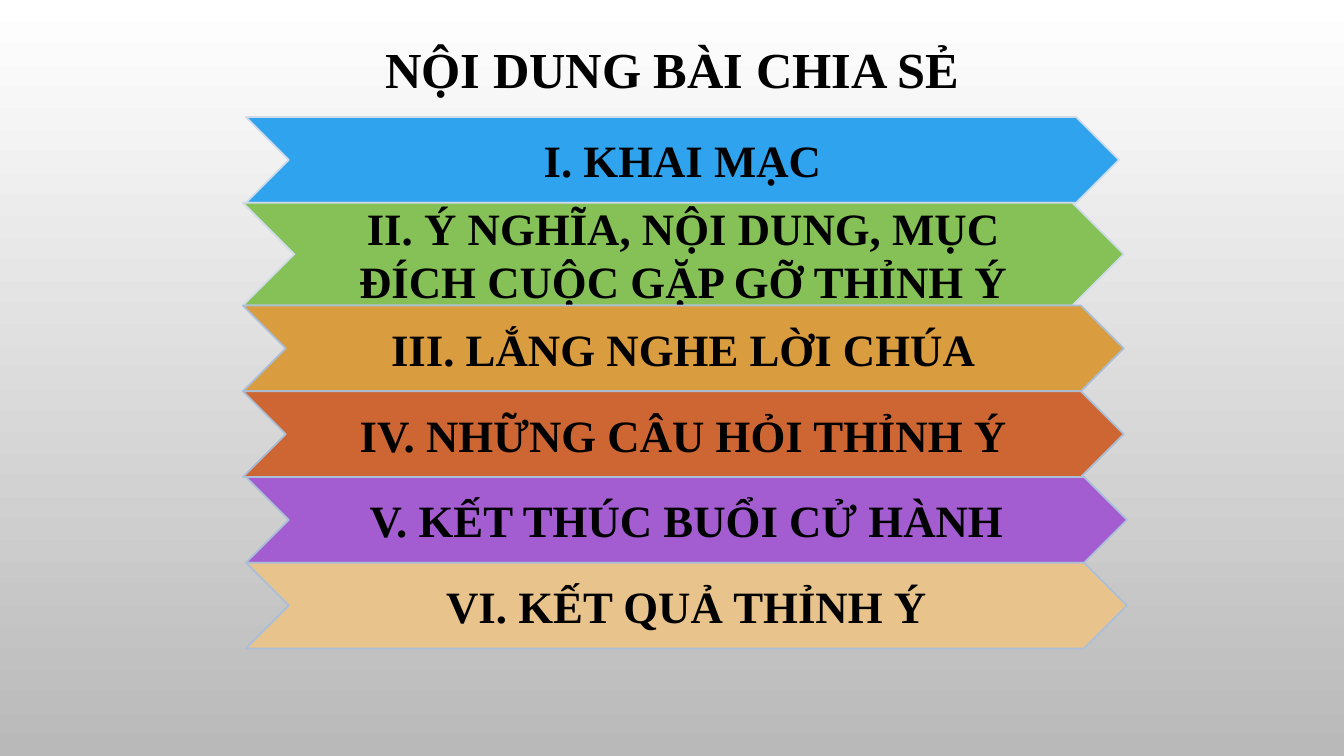
from pptx import Presentation
from pptx.dml.color import RGBColor
from pptx.enum.shapes import MSO_SHAPE
from pptx.enum.text import MSO_ANCHOR, MSO_AUTO_SIZE, PP_ALIGN
from pptx.util import Cm, Pt

COLORS = {
    "black": "000000",
    "white": "FFFFFF",
    "grey": "B9B9B9",
    "blue": "2FA3EE",
    "green": "86C157",
    "amber": "D99C3F",
    "rust": "CE6633",
    "purple": "A35DD1",
    "sand": "E8C48C",
    "pale edge": "D0DBE9",
    "steel edge": "AABED7",
}
FONT = "Times New Roman"
AGENDA = [
    ("I. KHAI MẠC", "blue", "pale edge", 0.08, 22, 2.16),
    ("II. Ý NGHĨA, NỘI DUNG, MỤC ĐÍCH CUỘC GẶP GỠ THỈNH Ý",
     "green", "pale edge", 0, 22.2, 2.59),
    ("III. LẮNG NGHE LỜI CHÚA", "amber", "steel edge", 0, 22.2, 2.16),
    ("IV. NHỮNG CÂU HỎI THỈNH Ý", "rust", "steel edge", 0, 22.2, 2.16),
    ("V. KẾT THÚC BUỔI CỬ HÀNH", "purple", "steel edge", 0.08, 22.2, 2.16),
    ("VI. KẾT QUẢ THỈNH Ý", "sand", "steel edge", 0.08, 22.2, 2.16),
]


def color(name):
    return RGBColor.from_string(COLORS[name])


def write_centred(shape, text, size, line_spacing=1.0):
    frame = shape.text_frame
    frame.word_wrap = True
    frame.auto_size = MSO_AUTO_SIZE.NONE
    frame.vertical_anchor = MSO_ANCHOR.MIDDLE
    para = frame.paragraphs[0]
    para.alignment = PP_ALIGN.CENTER
    para.line_spacing = line_spacing
    span = para.add_run()
    span.text = text
    span.font.name = FONT
    span.font.size = Pt(size)
    span.font.bold = True
    span.font.color.rgb = color("black")


def paint_background(page):
    fill = page.background.fill
    fill.gradient()
    fill.gradient_angle = 270
    for stop, name, position in zip(fill.gradient_stops, ("white", "grey"), (0, 1)):
        stop.color.rgb = color(name)
        stop.position = position


def place_title(page, left, top, width, height):
    title = page.shapes.title
    title.left, title.top = Cm(left), Cm(top)
    title.width, title.height = Cm(width), Cm(height)
    write_centred(title, "NỘI DUNG BÀI CHIA SẺ", 36, 0.9)


def place_agenda(page, left, top):
    for text, fill, edge, shift, width, height in AGENDA:
        chevron = page.shapes.add_shape(
            MSO_SHAPE.CHEVRON, Cm(left + shift), Cm(top), Cm(width), Cm(height))
        chevron.shadow.inherit = False
        chevron.fill.solid()
        chevron.fill.fore_color.rgb = color(fill)
        chevron.line.color.rgb = color(edge)
        chevron.line.width = Pt(1.25)
        write_centred(chevron, text, 32)
        top += height


def main():
    deck = Presentation()
    deck.slide_width, deck.slide_height = Cm(33.87), Cm(19.05)
    page = deck.slides.add_slide(deck.slide_layouts[5])
    paint_background(page)
    place_title(page, 8.13, 0, 17.63, 3.66)
    place_agenda(page, 6.12, 2.95)
    deck.save("out.pptx")


if __name__ == "__main__":
    main()
